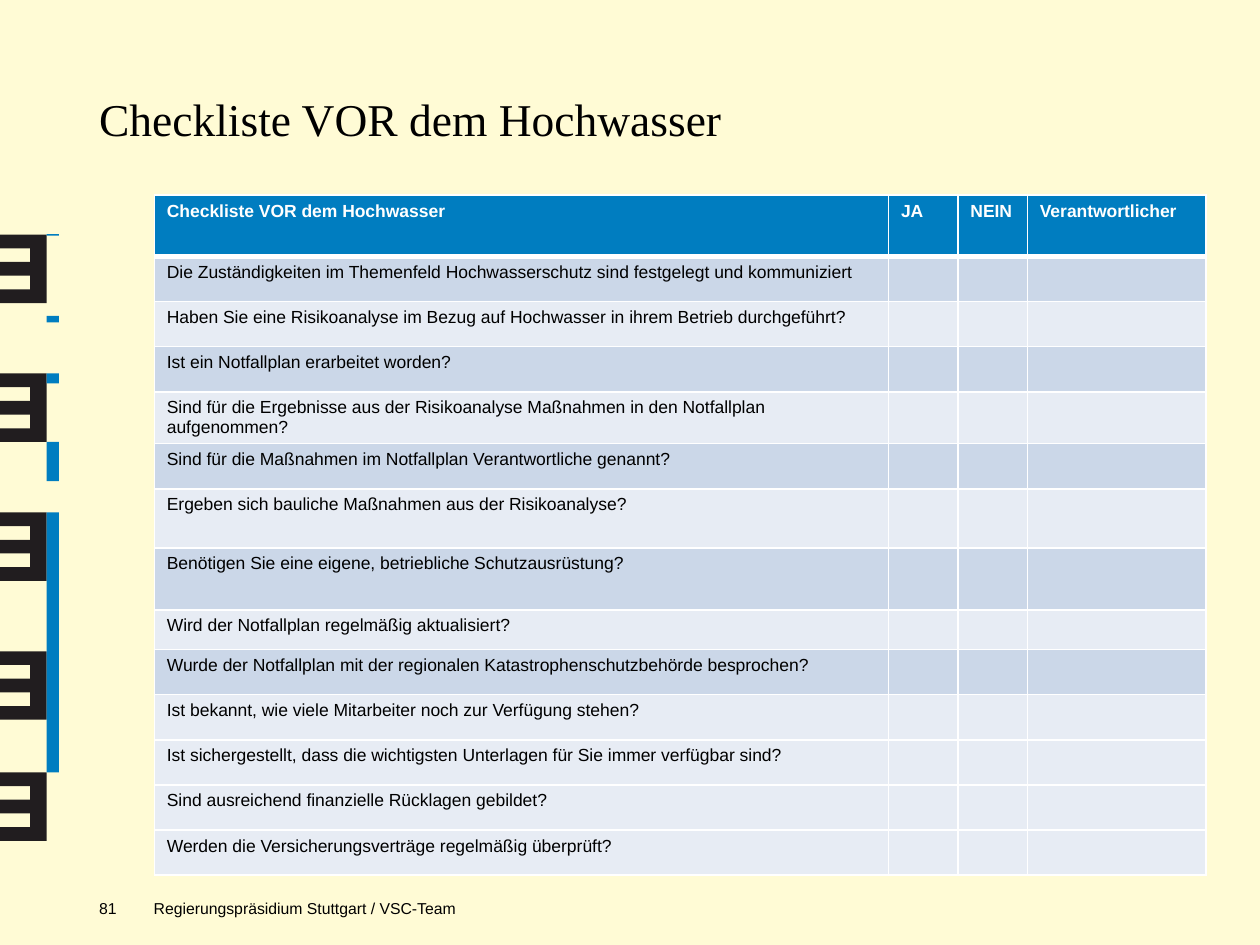
import pptx
import pptx.util
import pptx.dml.color
import pptx.enum.shapes
import pptx.enum.text
from lxml import etree

Cm = pptx.util.Cm
Pt = pptx.util.Pt
RGBColor = pptx.dml.color.RGBColor
Anchor = pptx.enum.text.MSO_ANCHOR

CREAM = RGBColor(0xFF, 0xFB, 0xD5)
BLACK = RGBColor(0, 0, 0)
WHITE = RGBColor(0xFF, 0xFF, 0xFF)
DARK = RGBColor(0x21, 0x1D, 0x1F)
BLUE = RGBColor(0x00, 0x7D, 0xC0)
BAND = RGBColor(0xCB, 0xD7, 0xE8)
PALE = RGBColor(0xE7, 0xEC, 0xF4)
NS = "http://schemas.openxmlformats.org/drawingml/2006/main"


def write(frame, text, size=10, font="Arial", color=BLACK, bold=False):
    para = frame.paragraphs[0]
    if not text:
        etree.SubElement(para._p, f"{{{NS}}}endParaRPr", sz=str(size * 100))
        return
    run = para.add_run()
    run.text = text
    run.font.size = Pt(size)
    run.font.name = font
    run.font.bold = bold
    run.font.color.rgb = color


def edge(cell, row):
    props = cell._tc.get_or_add_tcPr()
    for spot, side in enumerate(("lnL", "lnR", "lnT", "lnB")):
        thick = (side, row) in (("lnB", 0), ("lnT", 1))
        line = etree.Element(f"{{{NS}}}{side}", w=str(Pt(3 if thick else 1)))
        fill = etree.SubElement(line, f"{{{NS}}}solidFill")
        etree.SubElement(fill, f"{{{NS}}}srgbClr", val=str(WHITE))
        props.insert(spot, line)


deck = pptx.Presentation()
deck.slide_width = Cm(25.4)
deck.slide_height = Cm(19.05)
slide = deck.slides.add_slide(deck.slide_layouts[6])
slide.background.fill.solid()
slide.background.fill.fore_color.rgb = CREAM

STEP = 0.276
COMB = [(0, 1), (0.61, 1), (0.61, 2), (0, 2), (0, 3), (0.61, 3),
        (0.61, 4), (0, 4), (0, 5), (0.94, 5), (0.94, 0)]
marks = []
for top in (4.73, 7.53, 10.33, 13.13, 15.57):
    build = slide.shapes.build_freeform(0, Cm(top))
    build.add_line_segments([(Cm(x), Cm(top + n * STEP)) for x, n in COMB])
    marks.append((build.convert_to_shape(), DARK))
for top, high in ((4.72, 0.03), (6.37, 0.13), (7.53, 0.2), (8.91, 0.79), (10.33, 5.24)):
    bar = slide.shapes.add_shape(pptx.enum.shapes.MSO_SHAPE.RECTANGLE,
                                 Cm(0.94), Cm(top), Cm(0.25), Cm(high))
    marks.append((bar, BLUE))
for mark, color in marks:
    mark.shadow.inherit = False
    mark.fill.solid()
    mark.fill.fore_color.rgb = color
    mark.line.fill.background()

ROWS = [
    ("Checkliste VOR dem Hochwasser", 1.24, BLUE),
    ("Die Zuständigkeiten im Themenfeld Hochwasserschutz sind festgelegt und kommuniziert", 0.91, BAND),
    ("Haben Sie eine Risikoanalyse im Bezug auf Hochwasser in ihrem Betrieb durchgeführt?", 0.91, PALE),
    ("Ist ein Notfallplan erarbeitet worden?", 0.91, BAND),
    ("Sind für die Ergebnisse aus der Risikoanalyse Maßnahmen in den Notfallplan aufgenommen?", 0.91, PALE),
    ("Sind für die Maßnahmen im Notfallplan Verantwortliche genannt?", 0.91, BAND),
    ("Ergeben sich bauliche Maßnahmen aus der Risikoanalyse?", 1.19, PALE),
    ("Benötigen Sie eine eigene, betriebliche Schutzausrüstung?", 1.25, BAND),
    ("Wird der Notfallplan regelmäßig aktualisiert?", 0.8, PALE),
    ("Wurde der Notfallplan mit der regionalen Katastrophenschutzbehörde besprochen?", 0.91, BAND),
    ("Ist bekannt, wie viele Mitarbeiter noch zur Verfügung stehen?", 0.91, PALE),
    ("Ist sichergestellt, dass die wichtigsten Unterlagen für Sie immer verfügbar sind?", 0.91, PALE),
    ("Sind ausreichend finanzielle Rücklagen gebildet?", 0.91, PALE),
    ("Werden die Versicherungsverträge regelmäßig überprüft?", 0.91, PALE),
]
HEADS = ["JA", "NEIN", "Verantwortlicher"]
WIDTHS = [14.8, 1.4, 1.4, 3.6]

high = sum(row[1] for row in ROWS)
table = slide.shapes.add_table(len(ROWS), len(WIDTHS), Cm(3.11), Cm(3.93),
                               Cm(sum(WIDTHS)), Cm(high)).table
table.horz_banding = False
for col, wide in zip(table.columns, WIDTHS):
    col.width = Cm(wide)
for r, (text, tall, color) in enumerate(ROWS):
    table.rows[r].height = Cm(tall)
    texts = [text] + (HEADS if r == 0 else [""] * len(HEADS))
    for c, label in enumerate(texts):
        cell = table.cell(r, c)
        cell.fill.solid()
        cell.fill.fore_color.rgb = color
        edge(cell, r)
        write(cell.text_frame, label, color=BLACK if r else WHITE, bold=r == 0)

TEXTS = [
    ("Checkliste VOR dem Hochwasser", (2.0, 1.83, 22.5, 2.4), 0, Anchor.TOP,
     {"size": 26, "font": "Times New Roman"}),
    ("Regierungspräsidium Stuttgart / VSC-Team", (3.1, 18.0, 9.0, 0.51), 0.13, Anchor.BOTTOM,
     {"size": 9}),
    ("81", (2.0, 18.11, 0.76, 0.7), 0, Anchor.TOP, {"size": 9}),
]
for text, place, inset, anchor, style in TEXTS:
    frame = slide.shapes.add_textbox(*map(Cm, place)).text_frame
    frame.word_wrap = True
    frame.margin_left = frame.margin_right = frame.margin_bottom = 0
    frame.margin_top = Cm(inset)
    frame.vertical_anchor = anchor
    write(frame, text, **style)

deck.save("out.pptx")
